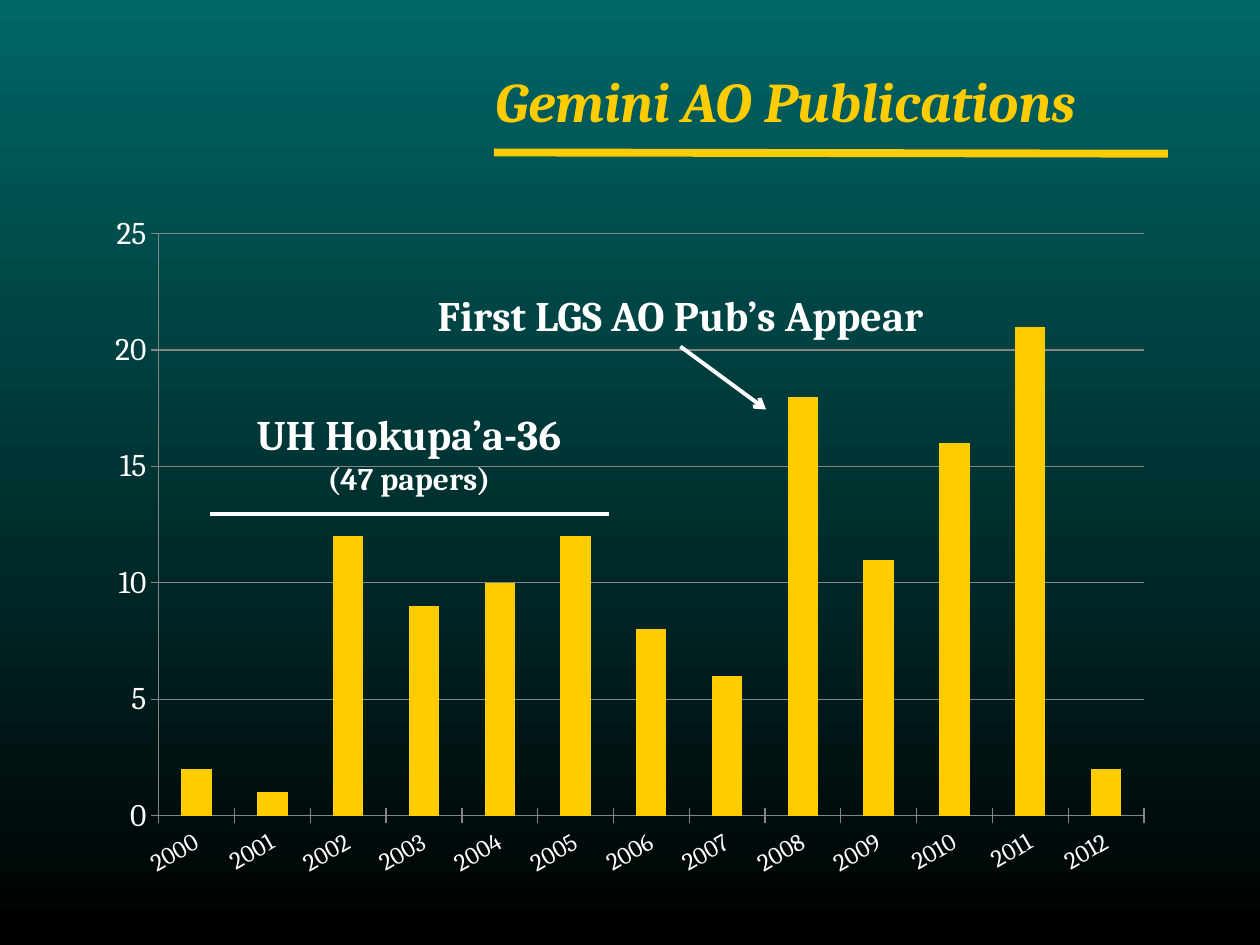
from lxml import etree
from pptx import Presentation, util as u
from pptx.chart.data import CategoryChartData
from pptx.dml.color import RGBColor
from pptx.enum import chart as ch, shapes, text
from pptx.oxml import parse_xml
from pptx.oxml.ns import nsdecls, qn

# Content
TITLE = "Gemini AO Publications"
FIRST_YEAR = 2000
PAPERS = [2, 1, 12, 9, 10, 12, 8, 6, 18, 11, 16, 21, 2]
NOTES = [  # left, top, width, height, lines of (wording, size)
    (3.17, 2.25, 4.46, 0.5, [("First LGS AO Pub’s Appear", 24)]),
    (1.85, 3.19, 2.79, 0.81, [("UH Hokupa’a-36", 24), ("(47 papers)", 18)]),
]
RULES = [  # x1, y1, x2, y2, colour, width, arrowhead
    (3.92, 1.21, 9.27, 1.22, "FFCC00", 4.5, False),
    (5.4, 2.75, 6.08, 3.25, "FFFFFF", 2.25, True),
    (1.67, 4.08, 4.83, 4.08, "FFFFFF", 2.25, False),
]
PLOT_AREA = {"x": 0.06, "y": 0.05, "w": 0.92, "h": 0.84}  # shares of the chart
GOLD, WHITE, GREY, FONT = "FFCC00", "FFFFFF", "868686", "Cambria"


def rgb(value):
    return RGBColor.from_string(value)


def style(font, size, color, bold=False, italic=False):
    font.name, font.size, font.bold, font.italic = FONT, u.Pt(size), bold, italic
    font.color.rgb = rgb(color)


def add_rule(page, x1, y1, x2, y2, color, width, arrow):
    rule = page.shapes.add_connector(shapes.MSO_CONNECTOR.STRAIGHT,
                                     *map(u.Inches, (x1, y1, x2, y2)))
    rule.line.color.rgb = rgb(color)
    rule.line.width = u.Pt(width)
    if arrow:
        etree.SubElement(rule.line._get_or_add_ln(), qn("a:tailEnd"), type="arrow")
    etree.SubElement(rule._element.spPr, qn("a:effectLst"))


def add_note(page, left, top, width, height, lines):
    box = page.shapes.add_textbox(*map(u.Inches, (left, top, width, height)))
    frame = box.text_frame
    frame.word_wrap = False
    frame.auto_size = text.MSO_AUTO_SIZE.SHAPE_TO_FIT_TEXT
    for i, (wording, size) in enumerate(lines):
        para = frame.add_paragraph() if i else frame.paragraphs[0]
        para.text = wording
        para.alignment = text.PP_ALIGN.CENTER
        style(para.font, size, WHITE, bold=True)


def add_papers_chart(page):
    data = CategoryChartData()
    data.categories = [str(FIRST_YEAR + i) for i in range(len(PAPERS))]
    data.add_series("Series 1", PAPERS)
    chart = page.shapes.add_chart(ch.XL_CHART_TYPE.COLUMN_CLUSTERED,
                                  *map(u.Inches, (0.75, 1.58, 8.5, 5.5)), data).chart
    chart.has_legend = chart.has_title = False
    style(chart.font, 18, "000000")

    # Columns
    plot = chart.plots[0]
    plot.gap_width = 150
    plot.vary_by_categories = False
    fill = plot.series[0].format.fill
    fill.solid()
    fill.fore_color.rgb = rgb(GOLD)

    # Axes
    years, counts = chart.category_axis, chart.value_axis
    for axis, size in ((years, 14), (counts, 18)):
        style(axis.tick_labels.font, size, WHITE)
        axis.major_tick_mark = ch.XL_TICK_MARK.CROSS
        axis.format.line.color.rgb = rgb(GREY)
    years._element.find(qn("c:txPr")).find(qn("a:bodyPr")).set("rot", "-1800000")
    counts.minimum_scale, counts.maximum_scale, counts.major_unit = 0, 25, 5
    counts.has_major_gridlines = True
    counts.major_gridlines.format.line.color.rgb = rgb(GREY)

    # Fixed plot area
    area = chart._chartSpace.chart.plotArea
    for old in area.findall(qn("c:layout")):
        area.remove(old)
    sizes = "".join(f'<c:{k} val="{v}"/>' for k, v in PLOT_AREA.items())
    area.insert(0, parse_xml(
        f'<c:layout {nsdecls("c")}><c:manualLayout><c:layoutTarget val="inner"/>'
        f'<c:xMode val="edge"/><c:yMode val="edge"/>{sizes}</c:manualLayout></c:layout>'))


def main():
    deck = Presentation()
    deck.slide_width, deck.slide_height = u.Inches(10), u.Inches(7.5)
    page = deck.slides.add_slide(deck.slide_layouts[5])

    # Background, shaded downwards
    fill = page.background.fill
    fill.gradient()
    fill.gradient_angle = 270
    for stop, color, position in zip(fill.gradient_stops, ("006666", "000000"), (0, 1)):
        stop.color.rgb = rgb(color)
        stop.position = position

    # Title
    title = page.shapes.title
    title.left, title.top, title.width, title.height = map(u.Inches, (3.83, 0.42, 5.42, 0.75))
    title.text_frame.text = TITLE
    title.text_frame.vertical_anchor = text.MSO_ANCHOR.MIDDLE
    para = title.text_frame.paragraphs[0]
    para.alignment = text.PP_ALIGN.LEFT
    style(para.font, 32, GOLD, bold=True, italic=True)

    # Chart, then its annotations
    add_papers_chart(page)
    for note in NOTES:
        add_note(page, *note)
    for rule in RULES:
        add_rule(page, *rule)
    deck.save("out.pptx")


if __name__ == "__main__":
    main()
